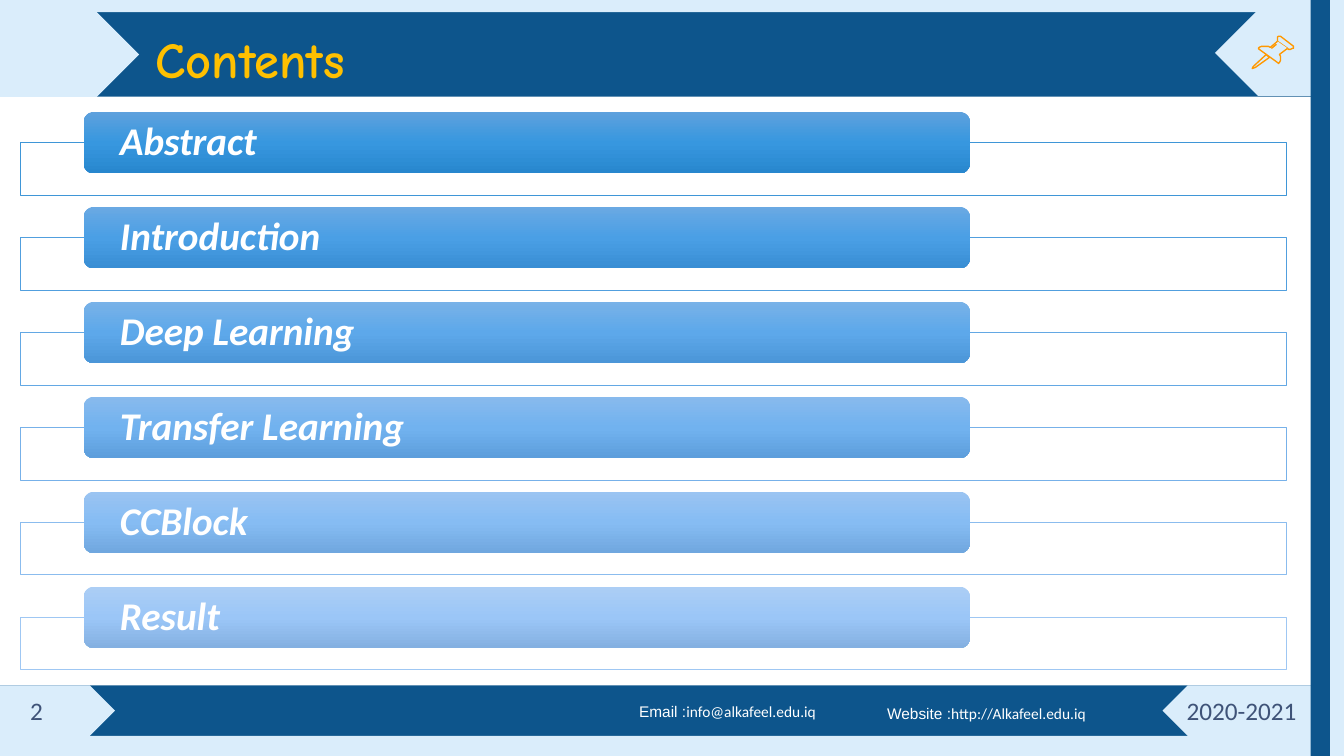
from copy import deepcopy

from pptx import Presentation
from pptx import util as u
from pptx.dml.color import RGBColor
from pptx.enum import shapes as kinds, text as styles
from pptx.oxml import ns
from pptx.oxml.xmlchemy import OxmlElement

# Content
TITLE = "Contents"
# topic, frame line, bar gradient from top to bottom
TOPICS = [
    ("Abstract", "3F96D7", ("5EA1DD", "3797DF", "2887CE")),
    ("Introduction", "519FDE", ("6AA9E3", "4A9FE5", "398ED4")),
    ("Deep Learning", "63A8E4", ("78B2E8", "5DA8EA", "4B96D8")),
    ("Transfer Learning", "77B1E9", ("88BAED", "71B2EF", "5D9EDC")),
    ("CCBlock", "8BBCEE", ("9AC4F2", "86BCF3", "70A7DF")),
    ("Result", "9FC7F3", ("ACCEF5", "9BC6F7", "84B0E1")),
]
COLORS = {"navy": "0D558C", "sky": "DAEDFB", "white": "FFFFFF",
          "gold": "FFC000", "slate": "3F5378", "pin": "FF9800"}

# Slide grid, in inches
WIDTH, HEIGHT = 13.33, 7.5
HEAD_TOP, HEAD_END = 0.12, 0.96
FOOT_TOP, FOOT_END = 6.8, 7.3
STRIPE = 0.19
STRIPE_LEFT = 13.0
ROW_TOP, ROW_PITCH = 1.11, 0.942
BAR_LEFT, BAR_WIDTH, BAR_HEIGHT = 0.83, 8.79, 0.61
FRAME_LEFT, FRAME_WIDTH, FRAME_HEIGHT = 0.2, 12.56, 0.52

BANDS = [
    ("navy", (0, 0, WIDTH, HEIGHT)),
    ("sky", (0, FOOT_END, WIDTH, HEIGHT - FOOT_END)),
    ("white", (0, HEAD_END, WIDTH, FOOT_TOP - HEAD_END)),
    ("sky", (0, 0, WIDTH, HEAD_TOP)),
]
STRIPES = [
    ("sky", (WIDTH - STRIPE, 0, STRIPE, HEIGHT)),
    ("navy", (STRIPE_LEFT, 0, STRIPE, HEIGHT)),
]
# place, turn in degrees
ARROWS = [
    ((WIDTH - 1.8, FOOT_TOP, 1.8, 0.5), 180),
    ((0, FOOT_TOP, 1.14, 0.5), 0),
    ((WIDTH - 1.28, 0.1, 1.28, 0.85), 180),
    ((0, HEAD_TOP, 1.38, HEAD_END - HEAD_TOP), 0),
]
# place, size, colour, (text, font) spans
LABELS = [
    ((6.24, 6.92, 2.38, 0.29), 11, "white",
     [("Email :", "Arial"), ("info@alkafeel.edu.iq", "Calibri")]),
    ((8.7, 6.94, 2.44, 0.29), 11, "white",
     [("Website :", "Arial"), ("http://Alkafeel.edu.iq", "Calibri")]),
    ((11.67, 6.85, 1.31, 0.4), 18, "slate", [("2020-2021", "Calibri")]),
    ((0.2, 6.85, 0.63, 0.4), 18, "slate", [("2", "Calibri")]),
]
# Push pin outlines, in hundredths of an inch: points, closed
PIN = [
    ([(1256, 54), (1243, 66), (1242, 68), (1245, 67), (1259, 57)], True),
    ([(1267, 41), (1277, 48), (1278, 49), (1280, 49), (1282, 48), (1283, 48),
      (1283, 46), (1270, 36), (1268, 36), (1267, 37), (1267, 39)], True),
    ([(1267, 41), (1260, 47), (1258, 46), (1254, 46), (1251, 46), (1249, 47),
      (1248, 48), (1249, 49), (1267, 62), (1268, 63), (1269, 62), (1270, 60),
      (1270, 56), (1269, 54), (1277, 48)], False),
    ([(1261, 48), (1266, 44)], False),
]


def rgb(color):
    return RGBColor.from_string(COLORS.get(color, color))


def inches(place):
    return [u.Inches(length) for length in place]


def apply(target, **values):
    for name, value in values.items():
        setattr(target, name, value)


def finish(shape, fill, line=None, weight=1):
    shape.shadow.inherit = False
    shape.fill.solid()
    shape.fill.fore_color.rgb = rgb(fill)
    if line:
        shape.line.color.rgb = rgb(line)
        shape.line.width = u.Pt(weight)
    else:
        shape.line.fill.background()
    return shape


def add_shape(page, kind, place, fill, line=None, weight=1):
    return finish(page.shapes.add_shape(kind, *inches(place)), fill, line, weight)


def add_span(para, words, font, size, color, **extra):
    span = para.add_run()
    span.text = words
    apply(span.font, name=font, size=u.Pt(size), **extra)
    span.font.color.rgb = rgb(color)


def shade(bar, stops):
    bar.fill.gradient()
    bar.fill.gradient_angle = 270
    stop_list = bar.element.spPr.find(".//" + ns.qn("a:gsLst"))
    stop_list.append(deepcopy(stop_list[0]))
    for index, (stop, color) in enumerate(zip(bar.fill.gradient_stops, stops)):
        stop.color.rgb = rgb(color)
        stop.position = index / 2


def add_topic(page, row, words, line, stops):
    top = ROW_TOP + row * ROW_PITCH
    frame = add_shape(page, kinds.MSO_SHAPE.RECTANGLE,
                      (FRAME_LEFT, top + BAR_HEIGHT / 2, FRAME_WIDTH, FRAME_HEIGHT),
                      "white", line, 0.5)
    alpha = OxmlElement("a:alpha")
    alpha.set("val", "90000")
    frame.element.spPr.find(ns.qn("a:solidFill"))[0].append(alpha)

    bar = add_shape(page, kinds.MSO_SHAPE.ROUNDED_RECTANGLE,
                    (BAR_LEFT, top, BAR_WIDTH, BAR_HEIGHT), stops[1])
    shade(bar, stops)
    apply(bar.text_frame, word_wrap=True, vertical_anchor=styles.MSO_ANCHOR.MIDDLE,
          margin_left=u.Inches(0.33), margin_right=u.Inches(0.33),
          margin_top=0, margin_bottom=0)
    para = bar.text_frame.paragraphs[0]
    apply(para, alignment=styles.PP_ALIGN.LEFT, line_spacing=0.9)
    add_span(para, words, "Calibri", 28, "white", bold=True, italic=True)


def main():
    deck = Presentation()
    apply(deck, slide_width=u.Inches(WIDTH), slide_height=u.Inches(HEIGHT))
    page = deck.slides.add_slide(deck.slide_layouts[5])

    # Bands, arrow ends and side stripes
    for color, place in BANDS:
        add_shape(page, kinds.MSO_SHAPE.RECTANGLE, place, color)
    for place, turn in ARROWS:
        add_shape(page, kinds.MSO_SHAPE.PENTAGON, place, "sky").rotation = turn
    for color, place in STRIPES:
        add_shape(page, kinds.MSO_SHAPE.RECTANGLE, place, color)

    # Push pin
    for points, closed in PIN:
        outline = page.shapes.build_freeform(*points[0], scale=u.Inches(0.01))
        outline.add_line_segments(points[1:], close=closed)
        finish(outline.convert_to_shape(), "sky", "pin", 0.96)

    # Topic rows
    for row, topic in enumerate(TOPICS):
        add_topic(page, row, *topic)

    # Footer labels
    for place, size, color, spans in LABELS:
        box = page.shapes.add_textbox(*inches(place))
        box.text_frame.word_wrap = True
        for words, font in spans:
            add_span(box.text_frame.paragraphs[0], words, font, size, color)

    # Title, brought in front of the header band
    title = page.shapes.title
    title.element.getparent().append(title.element)
    left, top, width, height = inches((1.44, 0.23, 10.3, 0.71))
    apply(title, left=left, top=top, width=width, height=height)
    apply(title.text_frame, word_wrap=True, auto_size=styles.MSO_AUTO_SIZE.NONE,
          vertical_anchor=styles.MSO_ANCHOR.TOP)
    para = title.text_frame.paragraphs[0]
    para.alignment = styles.PP_ALIGN.LEFT
    add_span(para, TITLE, "Comic Neue", 36, "gold", bold=True)

    deck.save("out.pptx")


if __name__ == "__main__":
    main()
